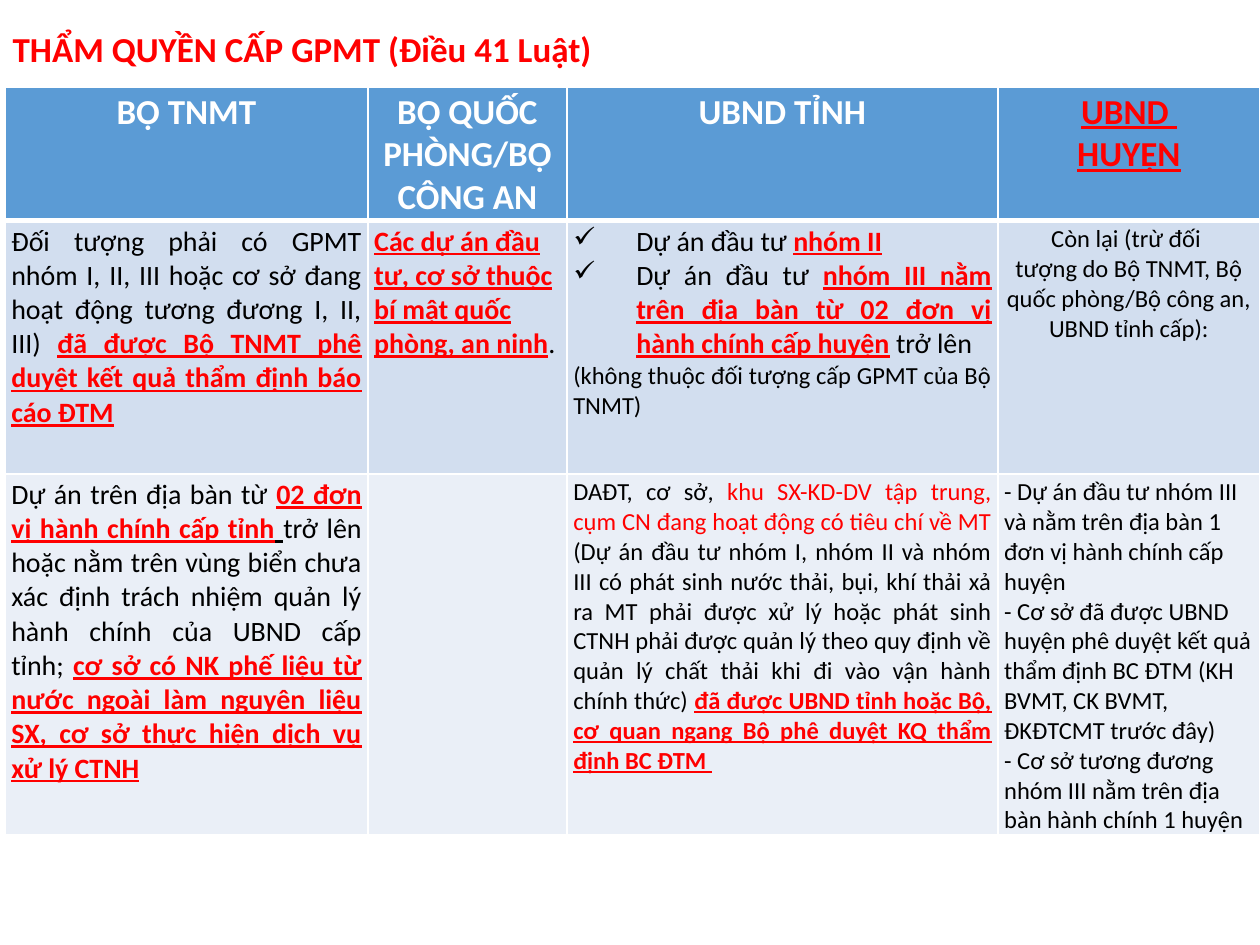
import pptx
import pptx.util
import pptx.dml.color
import pptx.enum.text
import pptx.oxml
import pptx.oxml.ns
import lxml.etree

RGBColor = pptx.dml.color.RGBColor
ALIGN = pptx.enum.text.PP_ALIGN
WHITE = RGBColor(0xFF, 0xFF, 0xFF)
BLACK = RGBColor(0x00, 0x00, 0x00)
RED = RGBColor(0xFF, 0x00, 0x00)
HEADER_BLUE = RGBColor(0x5B, 0x9B, 0xD5)
BAND_DARK = RGBColor(0xD2, 0xDE, 0xEF)
BAND_LIGHT = RGBColor(0xEA, 0xEF, 0xF7)

# (colour, bold, underline)
PLAIN = (BLACK, False, False)
HEAD = (WHITE, True, False)
TITLE = (RED, True, False)
NOTE = (RED, False, False)
KEY = (RED, True, True)
GAP = (BLACK, True, True)


class Deck:
    FONT = "Calibri"
    GRID_COLUMNS = 100
    GRID_ROWS = 75

    def __init__(self):
        self.prs = pptx.Presentation()
        self.prs.slide_width = pptx.util.Inches(10)
        self.prs.slide_height = pptx.util.Inches(7.5)
        self.s = self.prs.slides.add_slide(self.prs.slide_layouts[5])

    def x(self, columns):
        return round(columns * self.prs.slide_width / self.GRID_COLUMNS)

    def y(self, rows):
        return round(rows * self.prs.slide_height / self.GRID_ROWS)

    def paragraph(self, p, size, align, runs, bullet=None):
        p.alignment = align
        for text, (color, bold, underline) in runs:
            r = p.add_run()
            r.text = text
            r.font.name = self.FONT
            r.font.size = pptx.util.Pt(size)
            r.font.color.rgb = color
            r.font.bold = bold
            r.font.underline = underline
        if bullet:
            pPr = p._p.get_or_add_pPr()
            indent = pptx.util.Inches(0.5)
            pPr.set("marL", str(indent))
            pPr.set("indent", str(-indent))
            mark = lxml.etree.SubElement(pPr, pptx.oxml.ns.qn("a:buChar"))
            mark.set("char", bullet)

    def title(self, left, top, width, height, text):
        sp = self.s.shapes.title
        sp.left, sp.top = self.x(left), self.y(top)
        sp.width, sp.height = self.x(width), self.y(height)
        tf = sp.text_frame
        tf.word_wrap = True
        tf.auto_size = pptx.enum.text.MSO_AUTO_SIZE.SHAPE_TO_FIT_TEXT
        tf.vertical_anchor = pptx.enum.text.MSO_ANCHOR.TOP
        self.paragraph(tf.paragraphs[0], 20, ALIGN.LEFT, [(text, TITLE)])

    def border(self, cell, side, points):
        tcPr = cell._tc.get_or_add_tcPr()
        ln = lxml.etree.SubElement(tcPr, pptx.oxml.ns.qn(f"a:ln{side}"))
        ln.set("w", str(pptx.util.Pt(points)))
        fill = lxml.etree.SubElement(ln, pptx.oxml.ns.qn("a:solidFill"))
        color = lxml.etree.SubElement(fill, pptx.oxml.ns.qn("a:srgbClr"))
        color.set("val", str(WHITE))

    def cell(self, cell, fill, paragraphs, top=1, bottom=1):
        for side, points in (("L", 1), ("R", 1), ("T", top), ("B", bottom)):
            self.border(cell, side, points)
        cell.fill.solid()
        cell.fill.fore_color.rgb = fill
        cell.margin_left = cell.margin_right = pptx.util.Inches(0.05)
        cell.margin_top = cell.margin_bottom = pptx.util.Inches(0.03)
        tf = cell.text_frame
        for i, paragraph in enumerate(paragraphs):
            p = tf.add_paragraph() if i else tf.paragraphs[0]
            self.paragraph(p, *paragraph)

    def table(self, left, top, columns, rows, fills, content):
        table = self.s.shapes.add_table(
            len(rows), len(columns), self.x(left), self.y(top),
            self.x(sum(columns)), self.y(sum(rows))).table
        for column, width in zip(table.columns, columns):
            column.width = self.x(width)
        for row, height in zip(table.rows, rows):
            row.height = self.y(height)
        for i, (fill, cells) in enumerate(zip(fills, content)):
            for j, paragraphs in enumerate(cells):
                self.cell(table.cell(i, j), fill, paragraphs,
                          top=3 if i == 1 else 1, bottom=3 if i == 0 else 1)


def heading(*lines, style=HEAD):
    return [(20, ALIGN.CENTER, [(line, style)]) for line in lines]


def lines(align, *texts):
    return [(14, align, [(text, PLAIN)]) for text in texts]


HEADINGS = [
    heading("BỘ TNMT"),
    heading("BỘ QUỐC PHÒNG/BỘ CÔNG AN"),
    heading("UBND TỈNH"),
    heading("UBND ", "HUYỆN", style=KEY),
]

BY_GROUP = [
    [(16, ALIGN.JUSTIFY, [
        ("Đối tượng phải có GPMT nhóm I, II, III hoặc cơ sở đang hoạt động "
         "tương đương I, II, III) ", PLAIN),
        ("đã được Bộ TNMT phê duyệt kết quả thẩm định báo cáo ĐTM", KEY)])],
    [(16, ALIGN.LEFT, [
        ("Các dự án đầu tư, cơ sở thuộc bí mật quốc phòng, an ninh", KEY),
        (".", PLAIN)])],
    [(16, ALIGN.JUSTIFY, [
        ("Dự án đầu tư ", PLAIN),
        ("nhóm II", KEY)], "✓"),
     (16, ALIGN.JUSTIFY, [
         ("Dự án đầu tư ", PLAIN),
         ("nhóm III nằm trên địa bàn từ 02 đơn vị hành chính cấp huyện", KEY),
         (" trở lên", PLAIN)], "✓"),
     *lines(ALIGN.JUSTIFY, "(không thuộc đối tượng cấp GPMT của Bộ TNMT)")],
    lines(ALIGN.CENTER, "Còn lại (trừ đối ",
          "tượng do Bộ TNMT, Bộ quốc phòng/Bộ công an, UBND tỉnh cấp):"),
]

BY_AREA = [
    [(16, ALIGN.JUSTIFY, [
        ("Dự án trên địa bàn từ ", PLAIN),
        ("02 đơn vị hành chính cấp tỉnh", KEY),
        (" ", GAP),
        ("trở lên hoặc nằm trên vùng biển chưa xác định trách nhiệm quản lý "
         "hành chính của UBND cấp tỉnh; ", PLAIN),
        ("cơ sở có NK phế liệu từ nước ngoài làm nguyên liệu SX, cơ sở thực "
         "hiện dịch vụ xử lý CTNH", KEY)])],
    [],
    [(14, ALIGN.JUSTIFY, [
        ("DAĐT, cơ sở, ", PLAIN),
        ("khu SX-KD-DV tập trung, cụm CN đang hoạt động có tiêu chí về MT ",
         NOTE),
        ("(Dự án đầu tư nhóm I, nhóm II và nhóm III có phát sinh nước thải, "
         "bụi, khí thải xả ra MT phải được xử lý hoặc phát sinh CTNH phải "
         "được quản lý theo quy định về quản lý chất thải khi đi vào vận "
         "hành chính thức) ", PLAIN),
        ("đã được UBND tỉnh hoặc Bộ, cơ quan ngang Bộ phê duyệt KQ thẩm "
         "định BC ĐTM ", KEY)])],
    lines(ALIGN.LEFT,
          "- Dự án đầu tư nhóm III và nằm trên địa bàn 1 đơn vị hành chính "
          "cấp huyện",
          "- Cơ sở đã được UBND huyện phê duyệt kết quả thẩm định BC ĐTM "
          "(KH BVMT, CK BVMT, ĐKĐTCMT trước đây)",
          "- Cơ sở tương đương nhóm III nằm trên địa bàn hành chính 1 huyện"),
]


def main():
    deck = Deck()
    deck.title(0, 1.7, 95, 33.2, "THẨM QUYỀN CẤP GPMT (Điều 41 Luật)")
    deck.table(0.4, 6.9, columns=[28.8, 15.8, 34.2, 20.8],
               rows=[10.3, 20.1, 27.4],
               fills=[HEADER_BLUE, BAND_DARK, BAND_LIGHT],
               content=[HEADINGS, BY_GROUP, BY_AREA])
    deck.prs.save("out.pptx")


if __name__ == "__main__":
    main()
